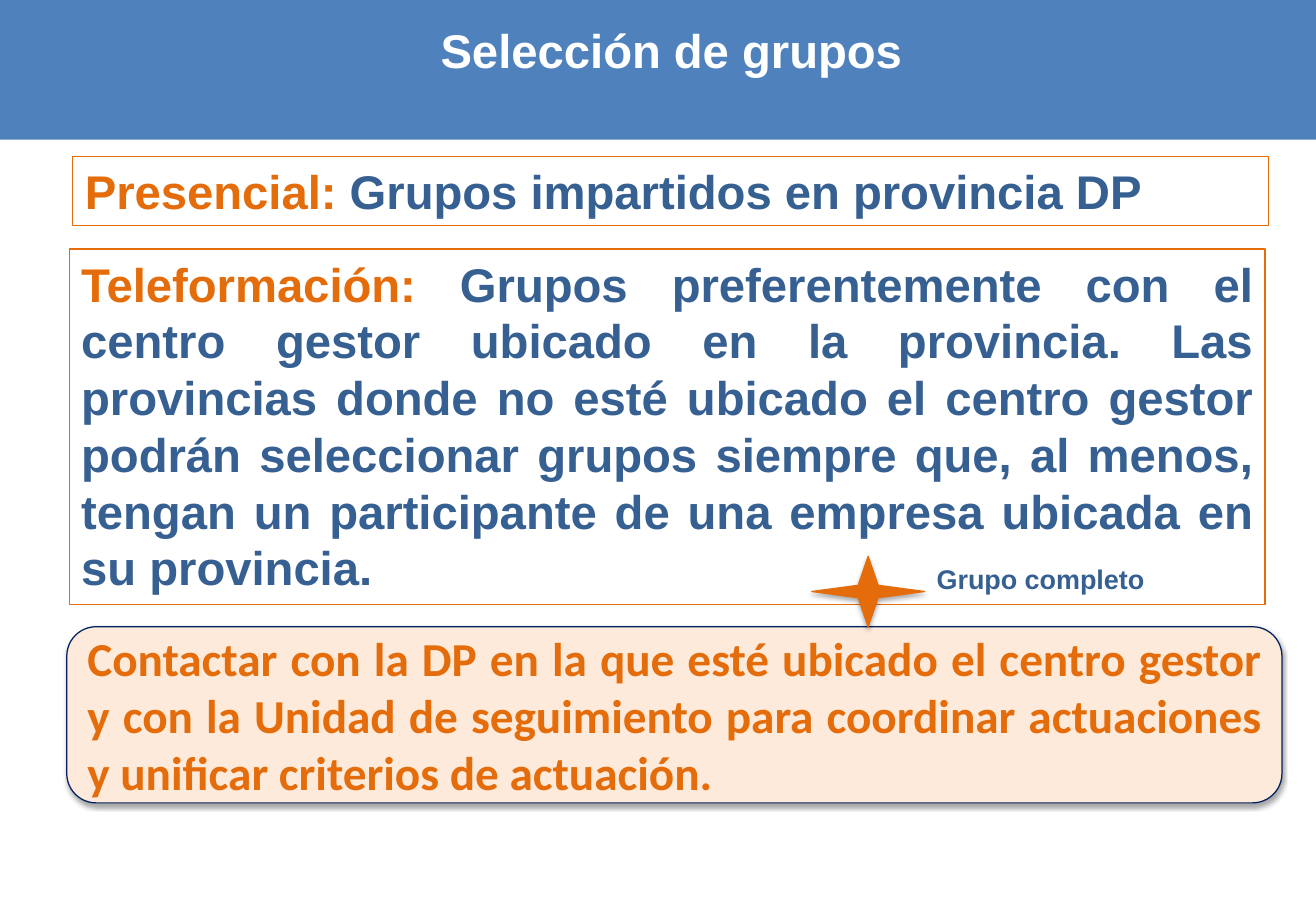
from lxml import etree
from pptx import Presentation
from pptx import util as u
from pptx.dml.color import RGBColor
from pptx.enum import shapes, text
from pptx.oxml import ns

COLORS = {
    "band": "4F81BD",
    "orange": "E46C0A",
    "blue": "376092",
    "navy": "002060",
    "peach": "FDEADA",
    "white": "FFFFFF",
    "shadow": "000000",
}
SHAPE = shapes.MSO_SHAPE
ALIGN = text.PP_ALIGN
ANCHOR = text.MSO_ANCHOR


def color(name):
    """Return the named colour."""
    return RGBColor.from_string(COLORS[name])


def add_shadow(shape):
    """Give the shape a soft shadow straight below it."""
    effects = shape._element.spPr.find(ns.qn("a:effectLst"))
    outer = etree.SubElement(
        effects, ns.qn("a:outerShdw"), blurRad=str(u.Pt(3.1)),
        dist=str(u.Pt(1.8)), dir="5400000", rotWithShape="0")
    tint = etree.SubElement(outer, ns.qn("a:srgbClr"), val=COLORS["shadow"])
    etree.SubElement(tint, ns.qn("a:alpha"), val="35000")


def add_panel(page, kind, place, fill=None, line=None, shadow=False):
    """Add a preset shape with an optional fill, outline and shadow."""
    shape = page.shapes.add_shape(kind, *map(u.Inches, place))
    shape.shadow.inherit = False
    if fill:
        shape.fill.solid()
        shape.fill.fore_color.rgb = color(fill)
    else:
        shape.fill.background()
    if line:
        shape.line.color.rgb = color(line)
        shape.line.width = u.Pt(0.75)
    else:
        shape.line.fill.background()
    if shadow:
        add_shadow(shape)
    return shape


def write(box, spans, align, size=28, font="Arial", anchor=ANCHOR.TOP):
    """Write one bold paragraph from (wording, colour) spans."""
    frame = box.text_frame
    frame.word_wrap = True
    frame.vertical_anchor = anchor
    para = frame.paragraphs[0]
    para.alignment = align
    for wording, tone in spans:
        span = para.add_run()
        span.text = wording
        span.font.name = font
        span.font.size = u.Pt(size)
        span.font.bold = True
        span.font.color.rgb = color(tone)


def add_label(page, place, wording, tone, align, size):
    """Add a plain text box."""
    box = page.shapes.add_textbox(*map(u.Inches, place))
    write(box, [(wording, tone)], align, size)


def add_mode(page, place, heading, detail):
    """Add an outlined box with a training mode and its rule."""
    box = add_panel(page, SHAPE.RECTANGLE, place, line="orange")
    write(box, [(heading, "orange"), (detail, "blue")], ALIGN.JUSTIFY)


def main():
    """Build and save the slide."""
    deck = Presentation()
    deck.slide_width, deck.slide_height = u.Inches(10.83), u.Inches(7.5)
    page = deck.slides.add_slide(deck.slide_layouts[6])

    add_panel(page, SHAPE.RECTANGLE, (0, 0, 10.83, 1.15), fill="band")
    notice = add_panel(page, SHAPE.ROUNDED_RECTANGLE, (0.55, 5.16, 10, 1.45),
                       fill="peach", line="navy", shadow=True)
    write(notice, [(
        "Contactar con la DP en la que esté ubicado el centro gestor y con la "
        "Unidad de seguimiento para coordinar actuaciones y unificar criterios "
        "de actuación.", "orange")],
        ALIGN.JUSTIFY, font="Calibri", anchor=ANCHOR.MIDDLE)

    add_label(page, (0.11, 0.13, 10.83, 0.57), "Selección de grupos",
              "white", ALIGN.CENTER, 28)
    add_mode(page, (0.6, 1.29, 9.84, 0.57), "Presencial:",
             " Grupos impartidos en provincia DP")
    add_mode(page, (0.57, 2.05, 9.84, 2.93), "Teleformación:",
             " Grupos preferentemente con el centro gestor ubicado en la "
             "provincia. Las provincias donde no esté ubicado el centro gestor "
             "podrán seleccionar grupos siempre que, al menos, tengan un "
             "participante de una empresa ubicada en su provincia.")
    add_label(page, (7.61, 4.58, 2.2, 0.37), "Grupo completo",
              "blue", ALIGN.LEFT, 16)
    add_panel(page, SHAPE.STAR_4_POINT, (6.68, 4.58, 0.93, 0.58),
              fill="orange", line="orange", shadow=True)

    deck.save("out.pptx")


if __name__ == "__main__":
    main()
